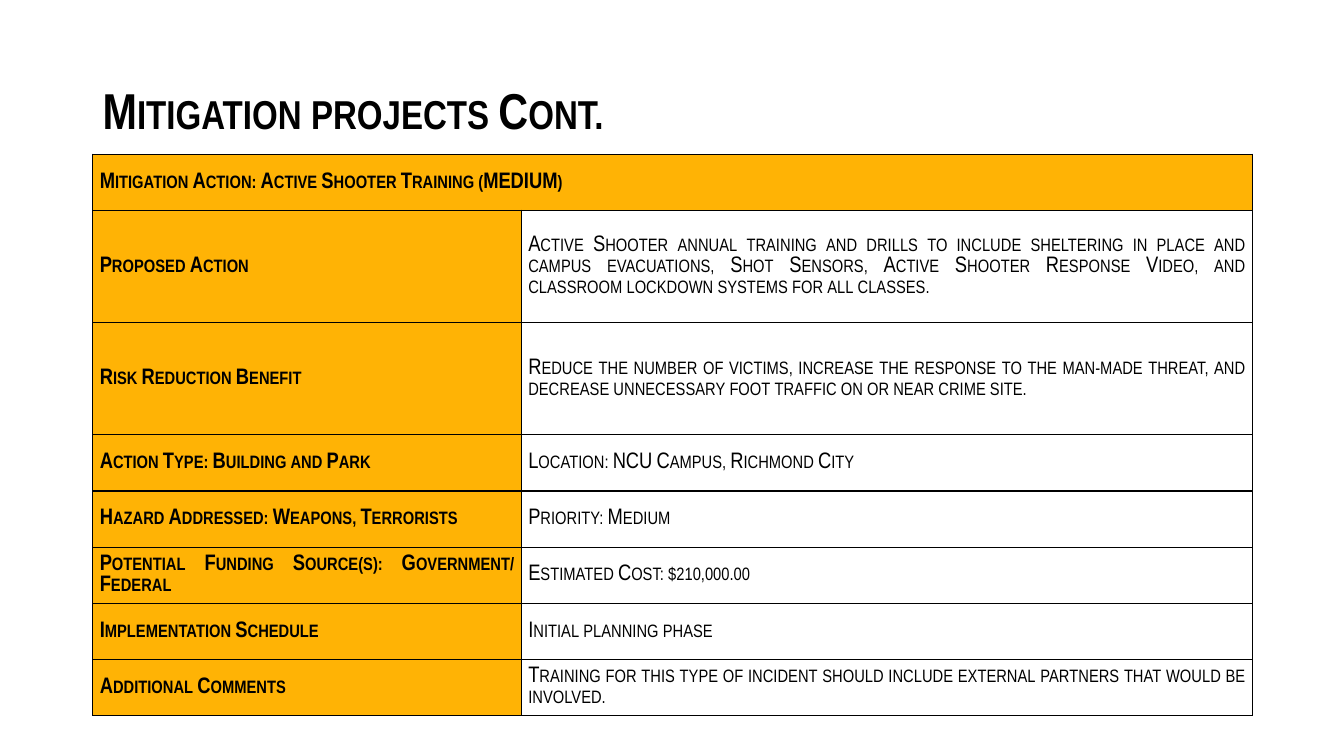
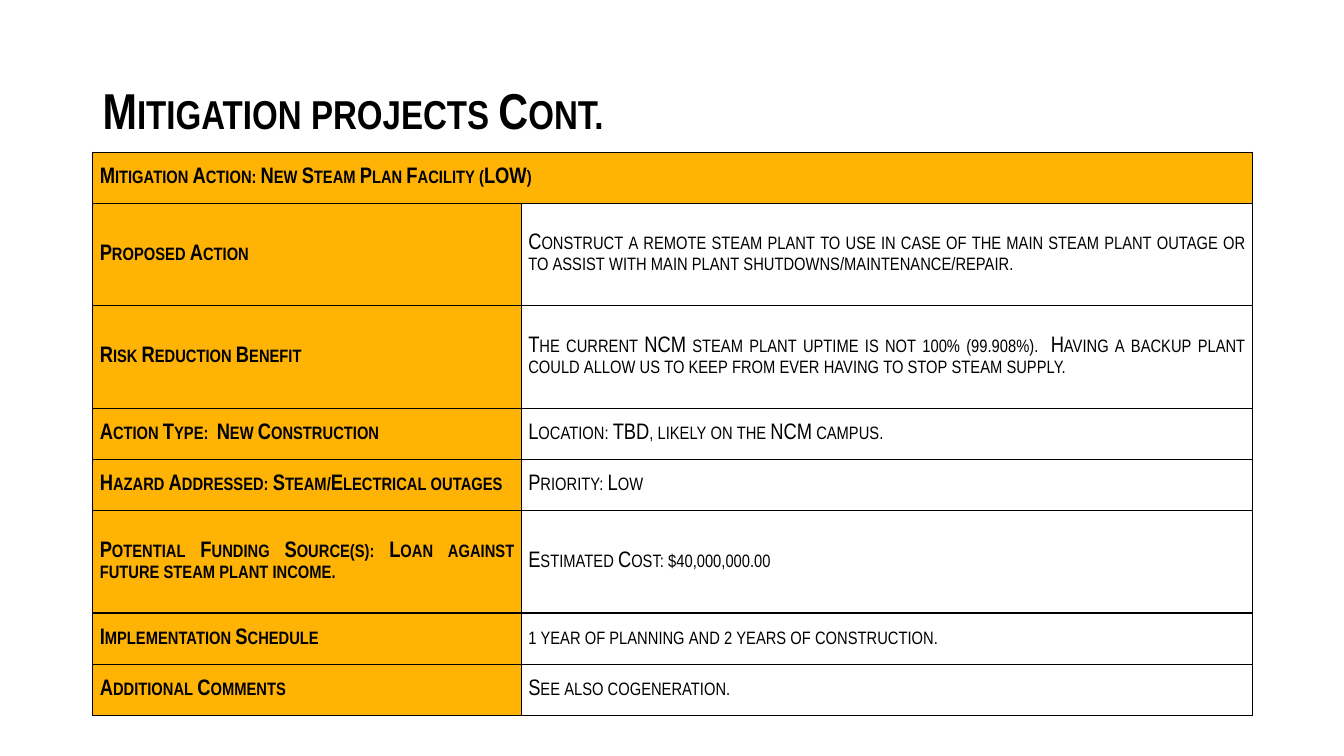
from dataclasses import dataclass

import pptx
import pptx.dml.color
import pptx.enum.text
import pptx.oxml
import pptx.oxml.ns
import pptx.util
from pptx.util import Inches

COLORS = {"gold": "FFB305", "black": "000000"}
FONT = "Arial Narrow"
TITLE = "Mitigation projects Cont."
LEFT, WIDTH = 0.92, 11.5
COLUMN_WIDTHS = (4.25, 7.25)
TABLE_BOTTOM = 7.1


@dataclass(frozen=True)
class Row:
    label: str
    detail: str
    units: int = 1


@dataclass(frozen=True)
class Project:
    heading: str
    table_top: float
    rows: tuple[Row, ...]


PROJECTS = (
    Project("Mitigation Action: Active Shooter Training (MEDIUM)", 1.53, (
        Row("Proposed Action",
            "Active Shooter annual training and drills to include sheltering in place and "
            "campus evacuations, Shot Sensors, Active Shooter Response Video, and classroom "
            "lockdown systems for all classes.", 2),
        Row("Risk Reduction Benefit",
            "Reduce the number of victims, increase the response to the man-made threat, "
            "and decrease unnecessary foot traffic on or near crime site.", 2),
        Row("Action Type: Building and Park", "Location: NCU Campus, Richmond City"),
        Row("Hazard Addressed: Weapons, Terrorists", "Priority: Medium"),
        Row("Potential Funding Source(s): Government/ Federal", "Estimated Cost: $210,000.00"),
        Row("Implementation Schedule", "Initial planning phase"),
        Row("Additional Comments",
            "Training for this type of incident should include external partners that "
            "would be involved."),
    )),
    Project("Mitigation Action: New Steam Plan Facility (LOW)", 1.51, (
        Row("Proposed Action",
            "Construct a remote steam plant to use in case of the main steam plant outage "
            "or to assist with main plant shutdowns/maintenance/repair.", 2),
        Row("Risk Reduction Benefit",
            "The current NCM steam plant uptime is not 100% (99.908%).  Having a backup "
            "plant could allow us to keep from ever having to stop steam supply.", 2),
        Row("Action Type:  New Construction", "Location: TBD, likely on the NCM campus."),
        Row("Hazard Addressed: Steam/Electrical outages", "Priority: Low"),
        Row("Potential Funding Source(s): Loan against future steam plant income.",
            "Estimated Cost: $40,000,000.00", 2),
        Row("Implementation Schedule", "1 year of planning and 2 years of construction."),
        Row("Additional Comments", "See also cogeneration."),
    )),
)


def rgb(name: str) -> pptx.dml.color.RGBColor:
    return pptx.dml.color.RGBColor.from_string(COLORS[name])


def format_run(r, size: float, bold: bool) -> None:
    r.font.name = FONT
    r.font.size = pptx.util.Pt(size)
    r.font.bold = bold
    r.font.color.rgb = rgb("black")
    r.font._element.set("cap", "small")


def add_title(s) -> None:
    tf = s.shapes.add_textbox(Inches(LEFT), Inches(0.4), Inches(WIDTH), Inches(1.45)).text_frame
    tf.word_wrap = True
    tf.vertical_anchor = pptx.enum.text.MSO_ANCHOR.MIDDLE
    p = tf.paragraphs[0]
    p.text = TITLE
    p.line_spacing = 0.9
    format_run(p.runs[0], 36, True)


def add_borders(cell) -> None:
    tc_pr = cell._tc.get_or_add_tcPr()
    for side in ("lnL", "lnR", "lnT", "lnB"):
        tc_pr.append(pptx.oxml.parse_xml(
            f'<a:{side} {pptx.oxml.ns.nsdecls("a")} w="{pptx.util.Pt(1)}"><a:solidFill>'
            f'<a:srgbClr val="{COLORS["black"]}"/></a:solidFill></a:{side}>'))


def fill_cell(cell, text: str, is_label: bool) -> None:
    add_borders(cell)
    if is_label:
        cell.fill.solid()
        cell.fill.fore_color.rgb = rgb("gold")
    else:
        cell.fill.background()
    cell.margin_left = cell.margin_right = Inches(0.07)
    cell.margin_top = cell.margin_bottom = 0
    cell.vertical_anchor = pptx.enum.text.MSO_ANCHOR.MIDDLE
    p = cell.text_frame.paragraphs[0]
    p.text = text
    p.alignment = pptx.enum.text.PP_ALIGN.JUSTIFY
    p.space_before = p.space_after = pptx.util.Pt(6)
    for r in p.runs:
        format_run(r, 16, is_label)


def add_project_table(s, project: Project) -> None:
    height = TABLE_BOTTOM - project.table_top
    units = [1] + [row.units for row in project.rows]
    table = s.shapes.add_table(
        len(units), len(COLUMN_WIDTHS), Inches(LEFT), Inches(project.table_top),
        Inches(WIDTH), Inches(height)).table
    table.first_row = table.horz_banding = False
    for column, width in zip(table.columns, COLUMN_WIDTHS):
        column.width = Inches(width)
    for table_row, count in zip(table.rows, units):
        table_row.height = Inches(height * count / sum(units))

    table.cell(0, 0).merge(table.cell(0, 1))
    fill_cell(table.cell(0, 0), project.heading, True)
    add_borders(table.cell(0, 1))
    for i, row in enumerate(project.rows, start=1):
        fill_cell(table.cell(i, 0), row.label, True)
        fill_cell(table.cell(i, 1), row.detail, False)


def main() -> None:
    prs = pptx.Presentation()
    prs.slide_width, prs.slide_height = Inches(13.33), Inches(7.5)
    for project in PROJECTS:
        s = prs.slides.add_slide(prs.slide_layouts[6])
        add_title(s)
        add_project_table(s, project)
    prs.save("out.pptx")


if __name__ == "__main__":
    main()
